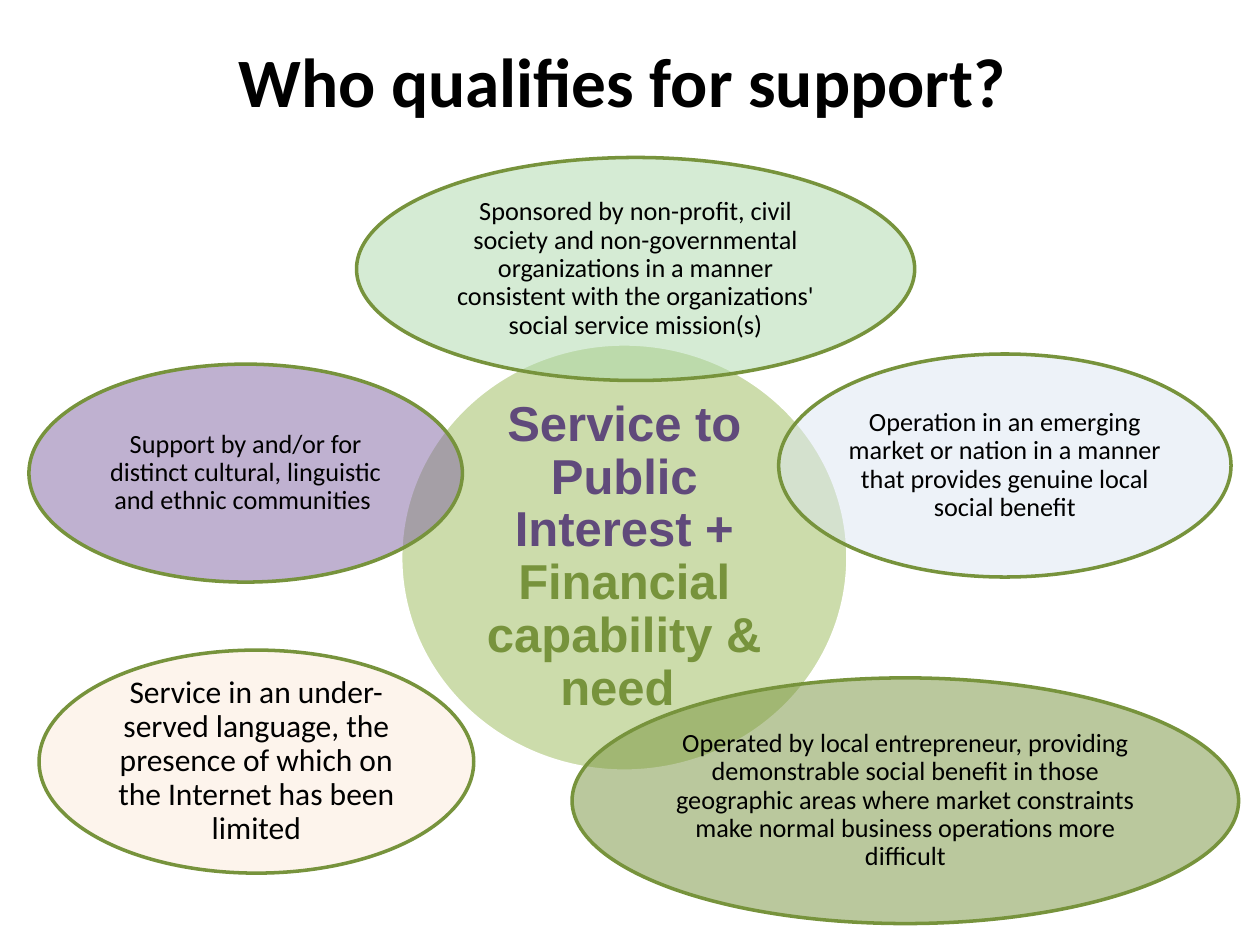
import pptx
import pptx.util
import pptx.dml.color
import pptx.enum.shapes
import pptx.enum.text
import pptx.oxml.ns
import lxml.etree

COLORS = {
    "black": "000000",
    "white": "FFFFFF",
    "outline": "77933C",
    "core": "9BBB59",
    "interest": "604A7B",
    "sponsor": "ADD9AB",
    "market": "DCE6F2",
    "entrepreneur": "77933C",
    "language": "FDEADA",
    "community": "8064A2",
}

CRITERIA = [
    ((2.83, 1.25, 4.43, 1.77), "sponsor", 15,
     "Sponsored by non-profit, civil society and non-governmental organizations "
     "in a manner consistent with the organizations' social service mission(s)"),
    ((6.18, 2.81, 3.59, 1.77), "market", 15,
     "Operation in an emerging market or nation in a manner that provides genuine local social benefit"),
    ((4.54, 5.38, 5.29, 1.95), "entrepreneur", 15,
     "Operated by local entrepreneur, providing demonstrable social benefit in those geographic areas "
     "where market constraints make normal business operations more difficult"),
    ((0.31, 5.16, 3.45, 1.77), "language", 18,
     "Service in an under-served language, the presence of which on the Internet has been limited"),
    ((0.23, 2.89, 3.44, 1.73), "community", 15,
     "Support by and/or for distinct cultural, linguistic and ethnic communities "),
]


class SlideBuilder:
    """Holds the style and the current slide, and adds its elements."""

    font = "Calibri"
    outline_width = pptx.util.Pt(2)
    opacity = 50

    def __init__(self, presentation):
        self.slide = presentation.slides.add_slide(presentation.slide_layouts[5])

    def color(self, name):
        return pptx.dml.color.RGBColor.from_string(COLORS[name])

    def place(self, shape, box):
        shape.left, shape.top, shape.width, shape.height = map(pptx.util.Inches, box)

    def title(self, text, box, size):
        title = self.slide.shapes.title
        self.place(title, box)
        frame = title.text_frame
        frame.text = text
        frame.vertical_anchor = pptx.enum.text.MSO_ANCHOR.TOP
        paragraph = frame.paragraphs[0]
        paragraph.alignment = pptx.enum.text.PP_ALIGN.CENTER
        paragraph.font.name = self.font
        paragraph.font.size = pptx.util.Pt(size)
        paragraph.font.bold = True
        paragraph.font.color.rgb = self.color("black")

    def ellipse(self, box, fill, runs, size, line="outline", font=font, bold=False, inset=0.02):
        shape = self.slide.shapes.add_shape(
            pptx.enum.shapes.MSO_SHAPE.OVAL, *map(pptx.util.Inches, box))
        shape.shadow.inherit = False
        shape.fill.solid()
        shape.fill.fore_color.rgb = self.color(fill)
        swatch = shape.fill._xPr.find(".//" + pptx.oxml.ns.qn("a:srgbClr"))
        lxml.etree.SubElement(swatch, pptx.oxml.ns.qn("a:alpha"), val=str(self.opacity * 1000))
        shape.line.color.rgb = self.color(line)
        shape.line.width = self.outline_width

        frame = shape.text_frame
        frame.word_wrap = True
        frame.vertical_anchor = pptx.enum.text.MSO_ANCHOR.MIDDLE
        frame.margin_left = frame.margin_right = pptx.util.Inches(inset)
        frame.margin_top = frame.margin_bottom = pptx.util.Inches(inset)
        paragraph = frame.paragraphs[0]
        paragraph.alignment = pptx.enum.text.PP_ALIGN.CENTER
        paragraph.line_spacing = 0.9
        paragraph.space_after = pptx.util.Pt(0.35 * size)
        paragraph.font.name = font
        paragraph.font.size = pptx.util.Pt(size)
        paragraph.font.bold = bold
        for text, color in runs:
            run = paragraph.add_run()
            run.text = text
            run.font.color.rgb = self.color(color)


def main():
    presentation = pptx.Presentation()
    presentation.slide_width = pptx.util.Inches(10)
    presentation.slide_height = pptx.util.Inches(7.5)
    builder = SlideBuilder(presentation)
    builder.title("Who qualifies for support? ", (0.5, 0.25, 9, 1.42), 39.6)
    builder.ellipse(
        (3.18, 2.73, 3.55, 3.39), "core",
        [("Service to Public Interest + ", "interest"),
         ("Financial capability & need ", "outline")],
        28, line="white", font="Arial", bold=True, inset=0.04)
    for box, fill, size, text in CRITERIA:
        builder.ellipse(box, fill, [(text, "black")], size)
    presentation.save("out.pptx")


if __name__ == "__main__":
    main()
